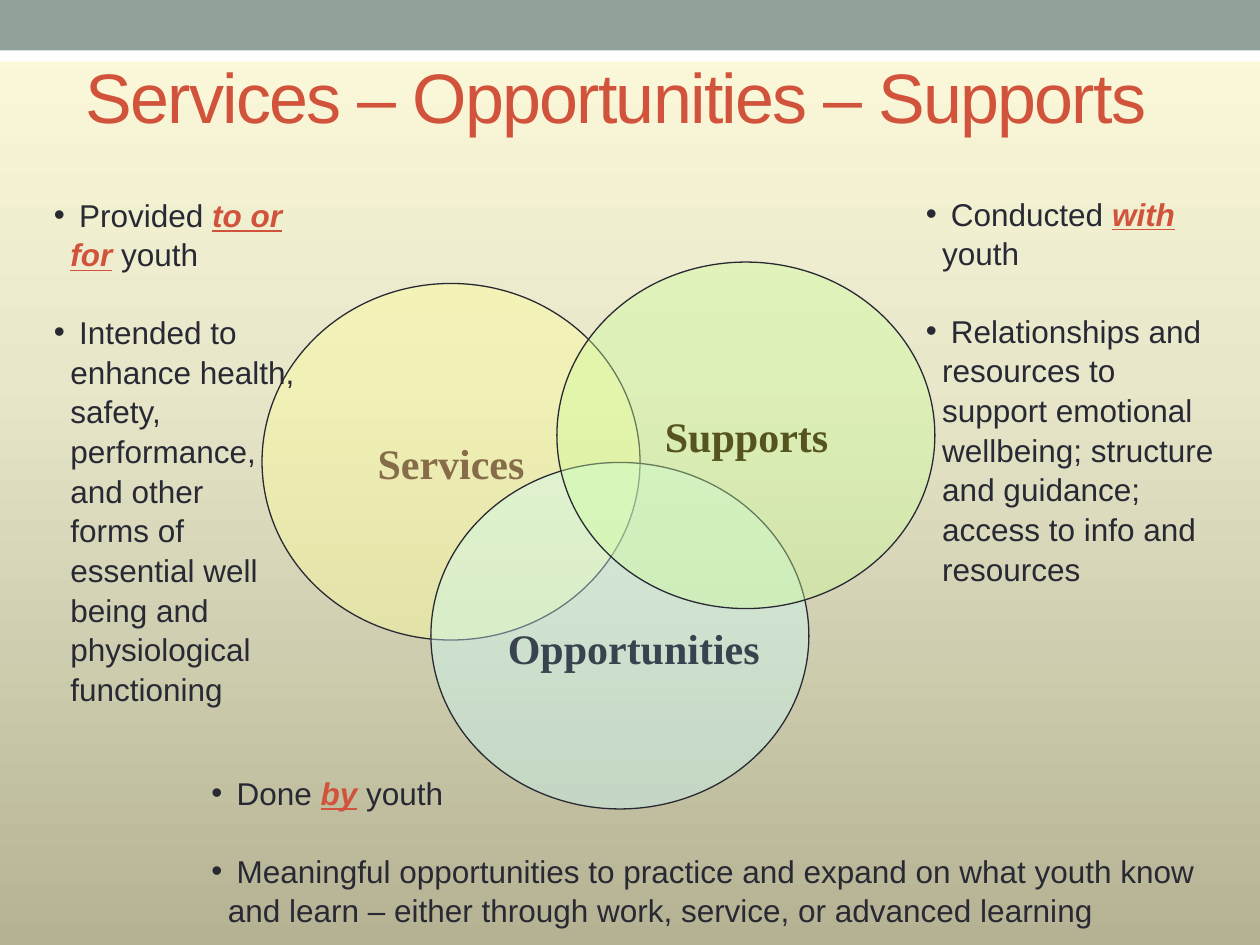
from dataclasses import dataclass

from lxml import etree
from pptx import Presentation
from pptx.dml.color import RGBColor
from pptx.enum.shapes import MSO_SHAPE
from pptx.enum.text import MSO_ANCHOR, MSO_AUTO_SIZE, PP_ALIGN
from pptx.oxml.ns import qn
from pptx.util import Inches, Pt


@dataclass(frozen=True)
class Theme:
    ink: str = "292934"
    accent: str = "D2533C"
    bar: str = "93A299"
    white: str = "FFFFFF"
    background: tuple = ((0, "FDFBDA"), (40, "E8E7CA"), (100, "B4B293"))
    font: str = "Arial"
    label_font: str = "Times New Roman"
    title_size: int = 40
    label_size: int = 24
    body_size: int = 18
    line_spacing: float = 1.05


THEME = Theme()


def rgb(value):
    return RGBColor.from_string(value)


def place(box):
    return [Inches(v) for v in box]


def style(r, size, color, font=THEME.font, bold=False):
    r.font.size = Pt(size)
    r.font.name = font
    r.font.bold = bold
    r.font.color.rgb = rgb(color)


def add_filled(slide, kind, box, color, alpha=None):
    sp = slide.shapes.add_shape(kind, *place(box))
    sp.shadow.inherit = False
    sp.fill.solid()
    sp.fill.fore_color.rgb = rgb(color)
    sp.line.fill.background()
    if alpha is not None:
        clr = sp.fill._xPr.find(qn("a:solidFill"))[0]
        etree.SubElement(clr, qn("a:alpha"), val=str(alpha * 1000))
    return sp


def set_background(slide):
    fill = slide.background.fill
    fill.gradient()
    fill.gradient_angle = 270
    stops = fill._xPr.find(qn("a:gradFill")).find(qn("a:gsLst"))
    for gs in list(stops):
        stops.remove(gs)
    for position, color in THEME.background:
        gs = etree.SubElement(stops, qn("a:gs"), pos=str(position * 1000))
        etree.SubElement(gs, qn("a:srgbClr"), val=color)


def add_header(slide, box):
    x, y, w, h = box
    add_filled(slide, MSO_SHAPE.RECTANGLE, (x, y + 0.24, w, h - 0.24), THEME.white)
    add_filled(slide, MSO_SHAPE.RECTANGLE, (x, y, w, 0.4), THEME.bar)


def add_title(slide, box, text):
    title = slide.shapes.title
    slide.shapes._spTree.append(title._element)
    title.left, title.top, title.width, title.height = place(box)
    tf = title.text_frame
    tf.text = text
    tf.auto_size = MSO_AUTO_SIZE.NONE
    tf.vertical_anchor = MSO_ANCHOR.MIDDLE
    p = tf.paragraphs[0]
    p.alignment = PP_ALIGN.JUSTIFY
    r = p.runs[0]
    style(r, THEME.title_size, THEME.accent)
    r.font._element.set("spc", "-100")


def add_venn(slide, box, circles, labels):
    x, y = box[:2]
    for dx, dy, w, h, color, alpha in circles:
        sp = add_filled(slide, MSO_SHAPE.OVAL, (x + dx, y + dy, w, h), color, alpha)
        sp.line.color.rgb = rgb(THEME.ink)
        sp.line.width = Pt(0.75)
    for dx, dy, w, text, color in labels:
        tf = slide.shapes.add_textbox(*place((x + dx, y + dy, w, 0.5))).text_frame
        tf.word_wrap = False
        tf.text = text
        p = tf.paragraphs[0]
        p.alignment = PP_ALIGN.CENTER
        style(p.runs[0], THEME.label_size, color, THEME.label_font, True)


def add_bullet(p):
    pPr = p._p.get_or_add_pPr()
    pPr.set("marL", str(Inches(0.13)))
    pPr.set("indent", str(-Inches(0.13)))
    etree.SubElement(pPr, qn("a:buFont"), typeface=THEME.font)
    etree.SubElement(pPr, qn("a:buChar"), char="•")
    p.line_spacing = THEME.line_spacing


def add_notes_list(slide, box, lead, emphasis, detail):
    tf = slide.shapes.add_textbox(*place(box)).text_frame
    tf.word_wrap = True
    p = tf.paragraphs[0]
    add_bullet(p)
    p.space_after = Pt(THEME.body_size * 1.2)
    for text in (f" {lead} ", emphasis, " youth"):
        r = p.add_run()
        r.text = text
        strong = text == emphasis
        style(r, THEME.body_size, THEME.accent if strong else THEME.ink, bold=strong)
        r.font.italic = r.font.underline = strong
    p = tf.add_paragraph()
    add_bullet(p)
    p.text = f" {detail}"
    for r in p.runs:
        style(r, THEME.body_size, THEME.ink)


def main():
    prs = Presentation()
    prs.slide_width, prs.slide_height = Inches(10), Inches(7.5)
    slide = prs.slides.add_slide(prs.slide_layouts[5])
    set_background(slide)
    add_header(slide, (0, 0, 10, 0.49))
    add_title(slide, (0.58, 0.17, 9, 1.17), "Services – Opportunities – Supports")
    add_venn(
        slide,
        (2.08, 2.08, 5.34, 4.34),
        [
            (0, 0.17, 3, 2.83, "FFFF99", 40),
            (1.34, 1.59, 3, 2.75, "CCFFFF", 38),
            (2.34, 0, 3, 2.75, "CCFF99", 38),
        ],
        [
            (0.81, 1.34, 1.38, "Services", "866C49"),
            (3.09, 1.13, 1.51, "Supports", "56541E"),
            (1.84, 2.81, 2.22, "Opportunities", "394350"),
        ],
    )
    add_notes_list(
        slide, (0.33, 1.49, 2.25, 4.04), "Provided", "to or for",
        "Intended to enhance health, safety, performance, \vand other \vforms of \v"
        "essential well being and physiological functioning",
    )
    add_notes_list(
        slide, (7.25, 1.48, 2.5, 3.13), "Conducted", "with",
        "Relationships and resources to support emotional wellbeing; "
        "structure and guidance; access to info and resources",
    )
    add_notes_list(
        slide, (1.58, 6.08, 8.25, 1.31), "Done", "by",
        "Meaningful opportunities to practice and expand on what youth know "
        "and learn – either through work, service, or advanced learning",
    )
    prs.save("out.pptx")


if __name__ == "__main__":
    main()
